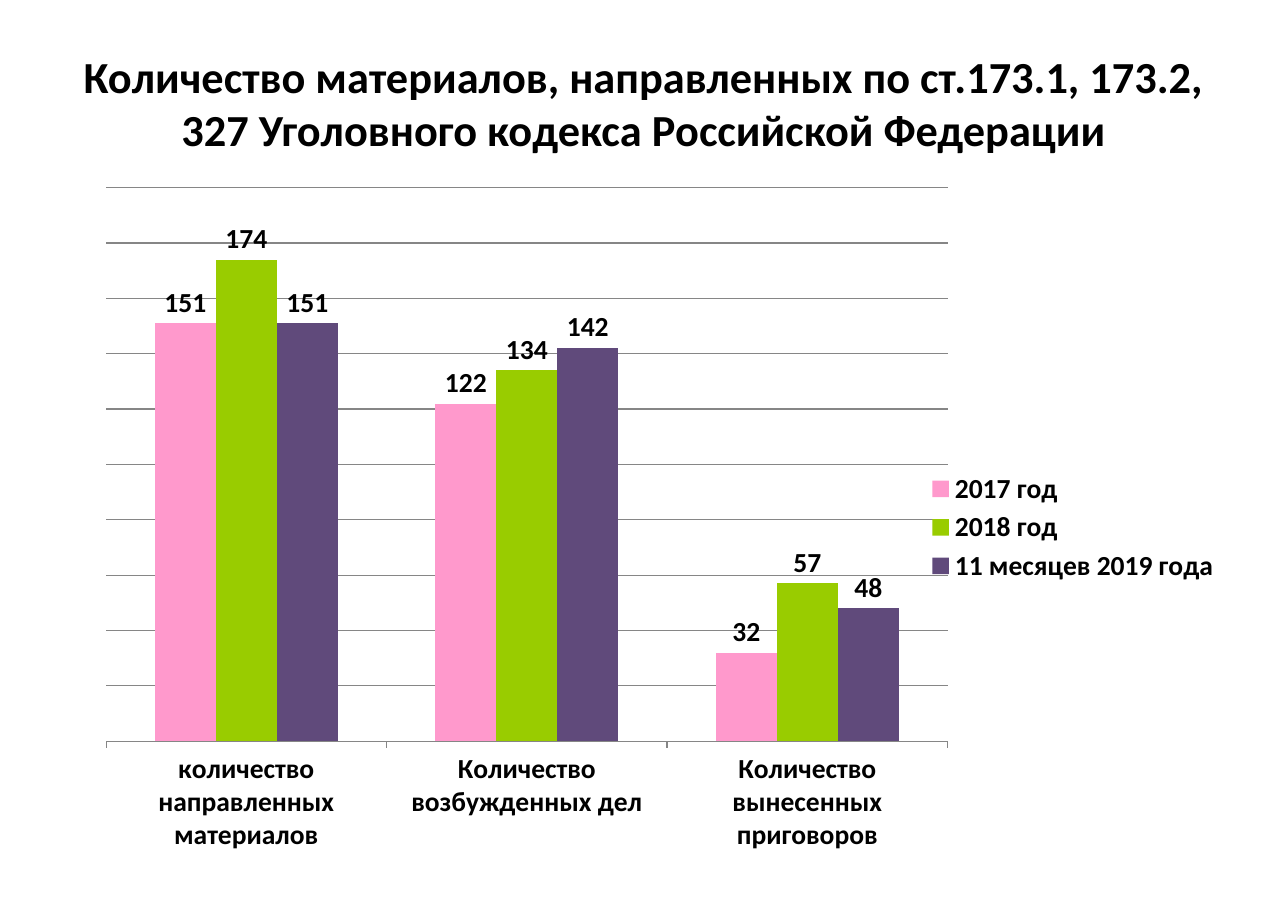
from lxml.etree import SubElement as Sub
from pptx import Presentation
from pptx.chart.data import CategoryChartData as Data
from pptx.dml.color import RGBColor
from pptx.enum.chart import XL_CHART_TYPE as Kind, XL_LABEL_POSITION as Spot
from pptx.enum.chart import XL_LEGEND_POSITION as Side, XL_TICK_MARK as Tick
from pptx.enum.text import MSO_ANCHOR as Anchor, MSO_AUTO_SIZE as Fit, PP_ALIGN as Align
from pptx.oxml.ns import qn
from pptx.util import Inches, Pt

TITLE = "Количество материалов, направленных по ст.173.1, 173.2, 327 Уголовного кодекса Российской Федерации"
CATS = ["количество направленных материалов", "Количество возбужденных дел", "Количество вынесенных приговоров"]
YEARS = [
    ("2017 год", (151, 122, 32), "FF99CC"),
    ("2018 год", (174, 134, 57), "99CC00"),
    ("11 месяцев 2019 года", (151, 142, 48), "604A7B"),
]
WIDE, HIGH = Inches(11.69), Inches(8.27)
HEAD = (0.05, 0.04, 0.9, 0.145)
BODY = (0.05, 0.185, 0.9, 0.78)
PLOT = (0.036, 0.027, 0.726, 0.779)
KEY = (0.74, 0.42, 0.26, 0.17)


def shade(code):
    return RGBColor.from_string(code)


def put(obj, **vals):
    for name, val in vals.items():
        setattr(obj, name, val)


def style(font, size):
    put(font, name="Calibri", size=Pt(size), bold=True)
    font.color.rgb = shade("000000")


def place(box):
    return [int(share * side) for share, side in zip(box, (WIDE, HIGH) * 2)]


def lay(node, spot, box, inner=False):
    for old in node.findall(qn("c:layout")):
        node.remove(old)
    outer = Sub(node, qn("c:layout"))
    node.insert(spot, outer)
    man = Sub(outer, qn("c:manualLayout"))
    rows = [("layoutTarget", "inner")] if inner else []
    rows += [("xMode", "edge"), ("yMode", "edge"), *zip("xywh", box)]
    for tag, val in rows:
        Sub(man, qn("c:" + tag)).set("val", str(val))


def head(slide):
    title = slide.shapes.title
    put(title, **dict(zip(("left", "top", "width", "height"), place(HEAD))))
    frame = title.text_frame
    put(frame, text=TITLE, word_wrap=True, auto_size=Fit.NONE, vertical_anchor=Anchor.MIDDLE,
        margin_left=Inches(0.11), margin_right=Inches(0.11),
        margin_top=Inches(0.06), margin_bottom=Inches(0.06))
    para = frame.paragraphs[0]
    para.alignment = Align.CENTER
    style(para.runs[0].font, 29)


def graph(slide):
    data = Data()
    data.categories = CATS
    for name, vals, _ in YEARS:
        data.add_series(name, vals)
    chart = slide.shapes.add_chart(Kind.COLUMN_CLUSTERED, *place(BODY), data).chart
    put(chart, has_title=False, has_legend=True)
    style(chart.font, 18)

    plot = chart.plots[0]
    put(plot, gap_width=160, overlap=0, vary_by_categories=False)
    for bars, (_, _, code) in zip(plot.series, YEARS):
        bars.format.fill.solid()
        bars.format.fill.fore_color.rgb = shade(code)
        marks = bars.data_labels
        put(marks, show_value=True, position=Spot.OUTSIDE_END)
        style(marks.font, 18)

    scale, base = chart.value_axis, chart.category_axis
    put(scale, visible=False, has_major_gridlines=True,
        minimum_scale=0, maximum_scale=200, major_unit=20)
    put(base, major_tick_mark=Tick.OUTSIDE, minor_tick_mark=Tick.NONE)
    style(base.tick_labels.font, 18)
    for part in (scale.major_gridlines, base):
        part.format.line.width = Pt(0.75)
        part.format.line.color.rgb = shade("868686")

    put(chart.legend, position=Side.RIGHT, include_in_layout=False)
    style(chart.legend.font, 18)
    root = chart.element
    lay(root.xpath("c:chart/c:plotArea")[0], 0, PLOT, True)
    lay(root.xpath("c:chart/c:legend")[0], 1, KEY)


def main():
    deck = Presentation()
    put(deck, slide_width=WIDE, slide_height=HIGH)
    slide = deck.slides.add_slide(deck.slide_layouts[5])
    head(slide)
    graph(slide)
    deck.save("out.pptx")


if __name__ == "__main__":
    main()
